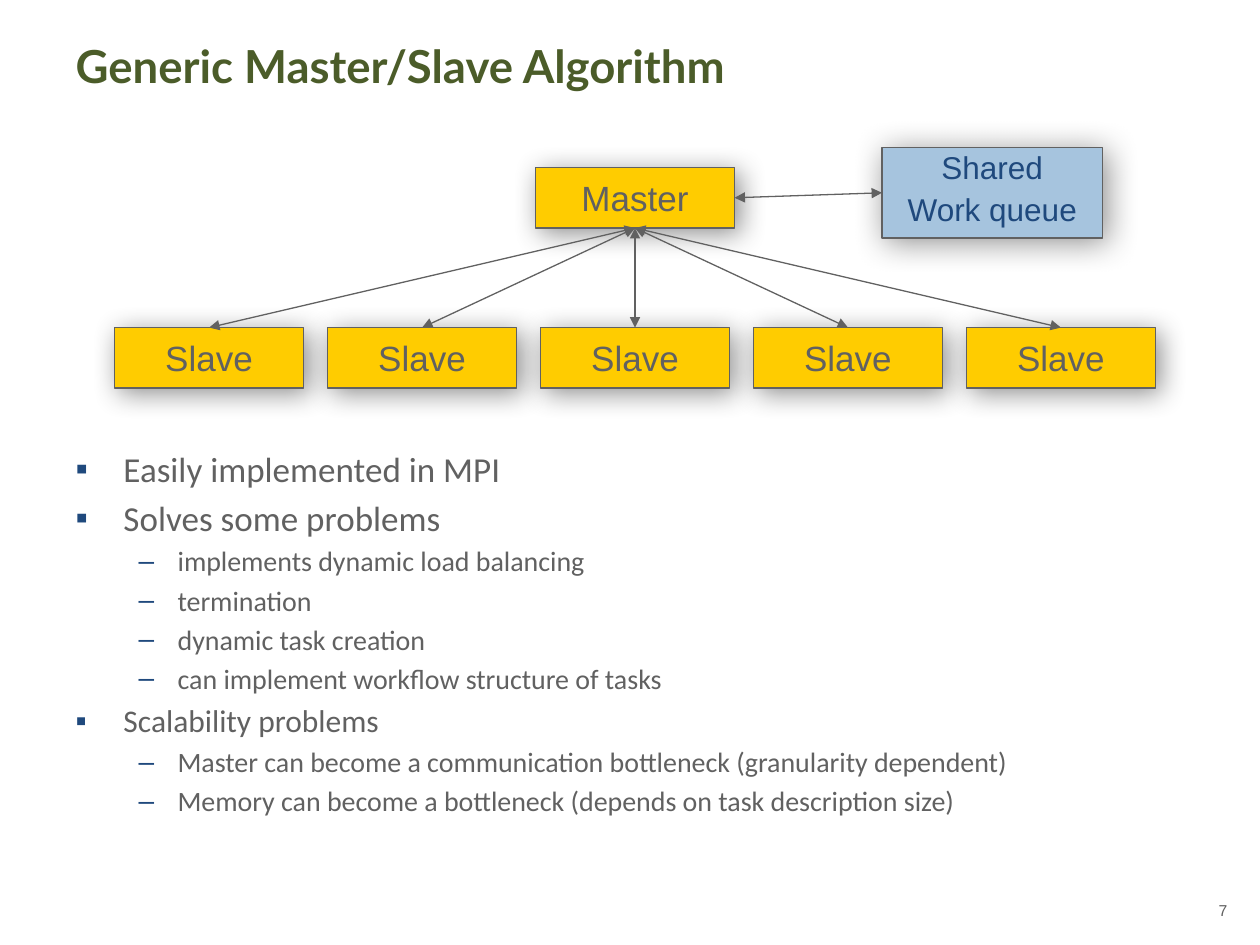
from dataclasses import dataclass

from lxml.etree import SubElement
from pptx import Presentation
from pptx.dml.color import RGBColor
from pptx.enum.shapes import MSO_CONNECTOR as Connector, MSO_SHAPE as Preset
from pptx.enum.text import MSO_ANCHOR as Anchor, MSO_AUTO_SIZE as AutoSize, PP_ALIGN as Align
from pptx.oxml.ns import qn
from pptx.util import Inches, Pt


@dataclass(frozen=True)
class Theme:
    green: str = "4B5C29"
    gray: str = "616161"
    navy: str = "1F497D"
    yellow: str = "FFCC00"
    blue: str = "A6C4DE"
    title_size: int = 26
    node_size: int = 20
    queue_size: int = 18
    number_size: int = 9
    line_width: float = 0.75


@dataclass(frozen=True)
class Node:
    """A labelled box of the diagram, with lengths in inches."""
    lines: tuple[str, ...]
    left: float
    top: float
    width: float
    height: float
    fill: str
    color: str
    size: int
    blur: int = 16
    distance: int = 4
    line_spacing: float = 1.0


@dataclass(frozen=True)
class Bullet:
    text: str
    size: int
    level: int = 0


@dataclass(frozen=True)
class LevelStyle:
    mark: str
    margin: float
    hanging: float


THEME = Theme()
LEVELS = (LevelStyle("▪", 0.38, 0.38), LevelStyle("–", 0.81, 0.31))
BULLETS = (
    Bullet("Easily implemented in MPI", 20),
    Bullet("Solves some problems", 20),
    Bullet("implements dynamic load balancing", 16, 1),
    Bullet("termination", 16, 1),
    Bullet("dynamic task creation", 16, 1),
    Bullet("can implement workflow structure of tasks", 16, 1),
    Bullet("Scalability problems", 18),
    Bullet("Master can become a communication bottleneck (granularity dependent)", 16, 1),
    Bullet("Memory can become a bottleneck (depends on task description size)", 16, 1),
)
NODE_STYLE = {"fill": THEME.yellow, "color": THEME.gray, "size": THEME.node_size}
MASTER = Node(("Master",), 4.25, 1.33, 1.58, 0.48, **NODE_STYLE)
SLAVE_COUNT, SLAVE_PITCH = 5, 1.69
SLAVES = [Node(("Slave",), 0.91 + i * SLAVE_PITCH, 2.6, 1.5, 0.48, **NODE_STYLE)
          for i in range(SLAVE_COUNT)]
QUEUE = Node(("Shared", "Work queue"), 7, 1.17, 1.75, 0.72, THEME.blue, THEME.navy,
             THEME.queue_size, blur=19, distance=3, line_spacing=0.7)
BOTTOM, TOP, LEFT, RIGHT = 2, 0, 1, 3


def set_attributes(target, values: dict) -> None:
    for name, value in values.items():
        setattr(target, name, value)


def place(shape, left: float, top: float, width: float, height: float) -> None:
    set_attributes(shape, {"left": Inches(left), "top": Inches(top),
                           "width": Inches(width), "height": Inches(height)})


def write(paragraph, text: str, font: str, size: int, color: str, bold: bool = False) -> None:
    run = paragraph.add_run()
    run.text = text
    set_attributes(run.font, {"name": font, "size": Pt(size), "bold": bold})
    run.font.color.rgb = RGBColor.from_string(color)


def outline(shape) -> None:
    shape.line.color.rgb = RGBColor.from_string(THEME.gray)
    shape.line.width = Pt(THEME.line_width)


def add_shadow(shape, blur: int, distance: int) -> None:
    shape.shadow.inherit = False
    effects = shape._element.spPr.find(qn("a:effectLst"))
    shadow = SubElement(effects, qn("a:outerShdw"), blurRad=str(Pt(blur)), dist=str(Pt(distance)),
                        dir=str(45 * 60000), algn="ctr", rotWithShape="0")
    color = SubElement(shadow, qn("a:srgbClr"), val="000000")
    SubElement(color, qn("a:alpha"), val="43000")


def add_node(shapes, node: Node):
    shape = shapes.add_shape(Preset.RECTANGLE, Inches(node.left), Inches(node.top),
                             Inches(node.width), Inches(node.height))
    shape.fill.solid()
    shape.fill.fore_color.rgb = RGBColor.from_string(node.fill)
    outline(shape)
    add_shadow(shape, node.blur, node.distance)
    frame = shape.text_frame
    set_attributes(frame, {"word_wrap": False, "vertical_anchor": Anchor.MIDDLE})
    for index, line in enumerate(node.lines):
        paragraph = frame.add_paragraph() if index else frame.paragraphs[0]
        set_attributes(paragraph, {"alignment": Align.CENTER, "line_spacing": node.line_spacing,
                                   "space_before": Pt(node.size * 0.5 if index else 0)})
        write(paragraph, line, "Arial", node.size, node.color)
    return shape


def add_arrow(shapes, start, start_side: int, end, end_side: int) -> None:
    """Join two boxes with a double-headed arrow."""
    arrow = shapes.add_connector(Connector.STRAIGHT, start.left, start.top, end.left, end.top)
    arrow.begin_connect(start, start_side)
    arrow.end_connect(end, end_side)
    outline(arrow)
    line = arrow.line._get_or_add_ln()
    for tag in ("a:headEnd", "a:tailEnd"):
        SubElement(line, qn(tag), type="triangle")
    SubElement(arrow._element.spPr, qn("a:effectLst"))


def add_bullet(paragraph, bullet: Bullet, first: bool) -> None:
    style = LEVELS[bullet.level]
    paragraph.level = bullet.level
    properties = paragraph._p.get_or_add_pPr()
    properties.set("marL", str(Inches(style.margin)))
    properties.set("indent", str(-Inches(style.hanging)))
    color = SubElement(properties, qn("a:buClr"))
    SubElement(color, qn("a:srgbClr"), val=THEME.navy)
    SubElement(properties, qn("a:buFont"), typeface="Arial")
    SubElement(properties, qn("a:buChar"), char=style.mark)
    paragraph.space_before = Pt(0 if first else bullet.size * 0.2)
    write(paragraph, bullet.text, "Calibri", bullet.size, THEME.gray)


def main() -> None:
    presentation = Presentation()
    set_attributes(presentation, {"slide_width": Inches(10), "slide_height": Inches(7.5)})
    slide = presentation.slides.add_slide(presentation.slide_layouts[1])
    top_text = {"vertical_anchor": Anchor.TOP, "auto_size": AutoSize.NONE, "word_wrap": True}

    # Title
    title = slide.shapes.title
    place(title, 0.5, 0.25, 8.99, 0.44)
    set_attributes(title.text_frame, top_text)
    heading = title.text_frame.paragraphs[0]
    heading.alignment = Align.LEFT
    write(heading, "Generic Master/Slave Algorithm", "Lato", THEME.title_size, THEME.green, True)

    # Bullet list
    body = slide.placeholders[1]
    place(body, 0.5, 3.5, 8.99, 3.53)
    frame = body.text_frame
    set_attributes(frame, top_text)
    for index, bullet in enumerate(BULLETS):
        paragraph = frame.add_paragraph() if index else frame.paragraphs[0]
        add_bullet(paragraph, bullet, first=index == 0)

    # Slide number
    number = slide.shapes.add_textbox(Inches(9.42), Inches(7.1), Inches(0.42), Inches(0.4))
    set_attributes(number.text_frame, top_text)
    paragraph = number.text_frame.paragraphs[0]
    paragraph.alignment = Align.RIGHT
    write(paragraph, "7", "Arial", THEME.number_size, THEME.gray)

    # Master and slaves
    diagram = slide.shapes.add_group_shape().shapes
    master = add_node(diagram, MASTER)
    slaves = [add_node(diagram, slave) for slave in SLAVES]
    for slave in slaves:
        add_arrow(diagram, master, BOTTOM, slave, TOP)

    # Shared work queue
    queue = add_node(slide.shapes, QUEUE)
    add_arrow(slide.shapes, master, RIGHT, queue, LEFT)

    presentation.save("out.pptx")


if __name__ == "__main__":
    main()
